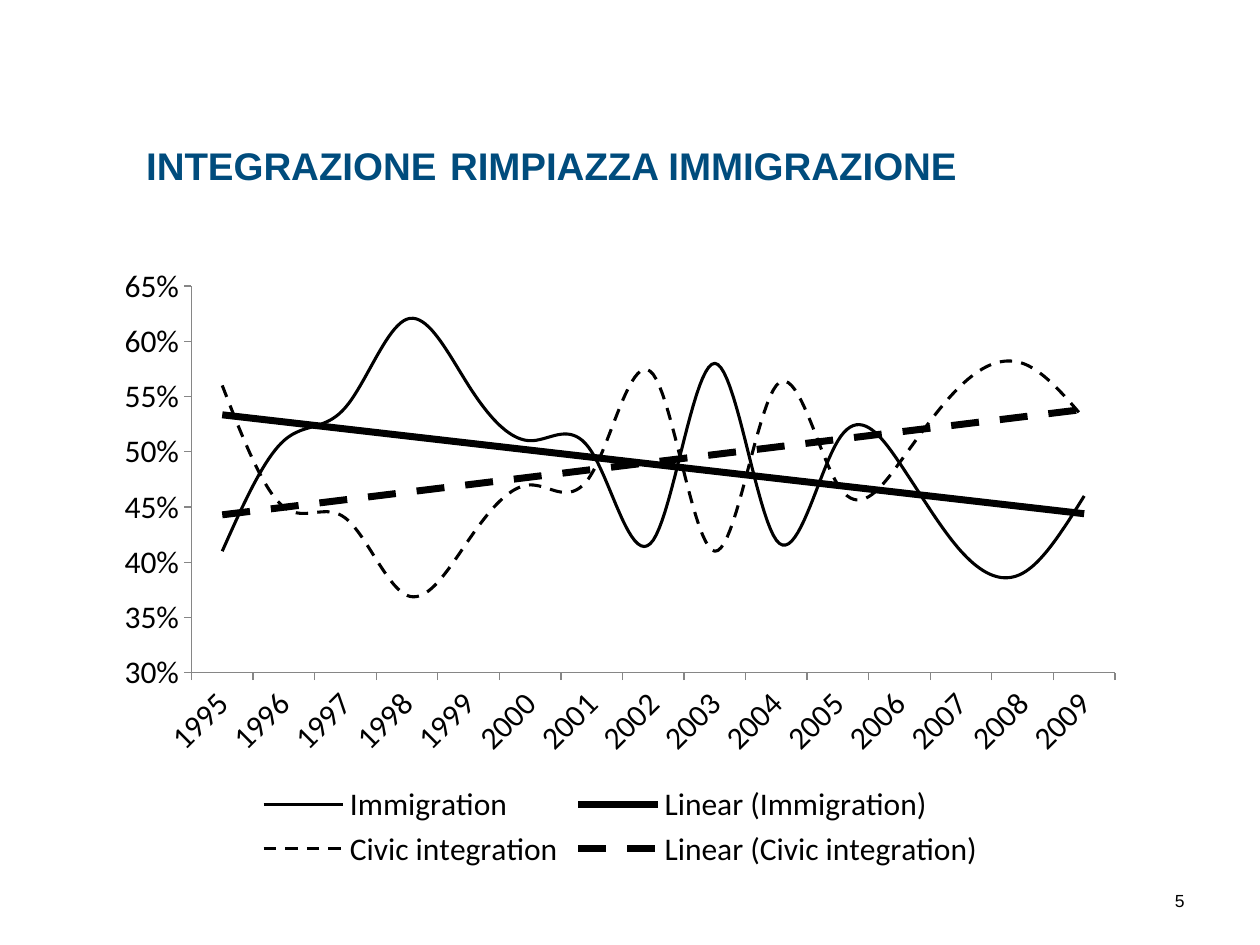
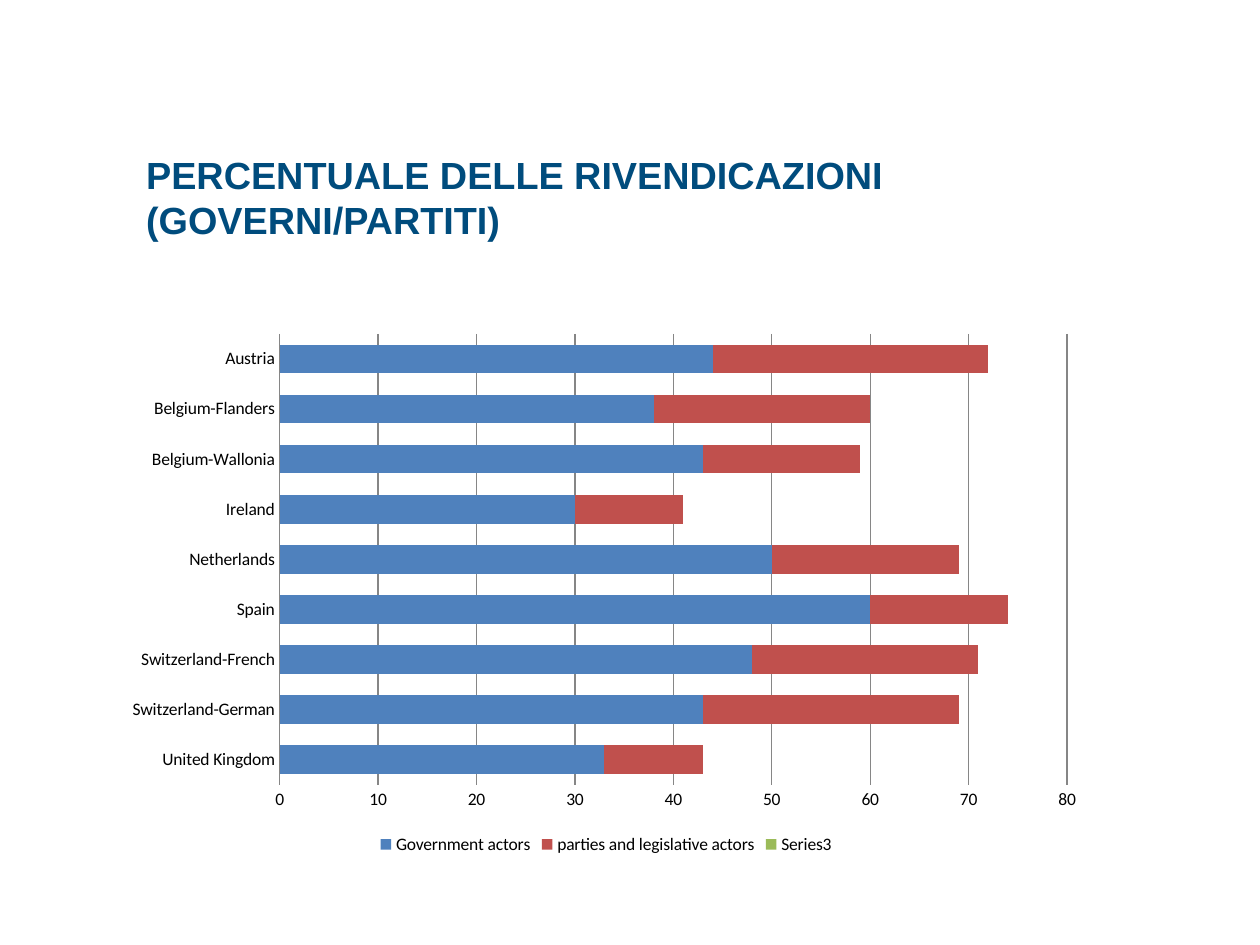
from pptx import Presentation
from pptx.chart.data import CategoryChartData
from pptx.dml.color import RGBColor
from pptx.enum.chart import XL_CHART_TYPE as ChartType, XL_LEGEND_POSITION as LegendPosition
from pptx.enum.chart import XL_TICK_MARK as TickMark
from pptx.enum.dml import MSO_LINE as Dash
from pptx.enum.text import MSO_ANCHOR as Anchor, MSO_AUTO_SIZE as AutoSize, PP_ALIGN as Align
from pptx.oxml import parse_xml
from pptx.oxml.ns import nsdecls
from pptx.util import Inches, Pt

BLACK, NAVY, GREY = "000000", "004C7D", "868686"


def colour(hex_code):
    return RGBColor.from_string(hex_code)


def add_span(para, text, size=22, color=NAVY, bold=True, new_line=False):
    if new_line:
        para.add_line_break()
    span = para.add_run()
    span.text = text
    span.font.name = "Arial"
    span.font.size = Pt(size)
    span.font.bold = bold
    span.font.color.rgb = colour(color)


deck = Presentation()
deck.slide_width, deck.slide_height = Inches(10), Inches(7.5)

# Content of the two pages
years = [str(year) for year in range(1995, 2010)]
topics = {
    "Immigration": [0.41, 0.51, 0.54, 0.62, 0.56, 0.51, 0.5, 0.42,
                    0.58, 0.42, 0.51, 0.49, 0.41, 0.39, 0.46],
    "Civic integration": [0.56, 0.45, 0.44, 0.37, 0.42, 0.47, 0.48, 0.57,
                          0.41, 0.56, 0.47, 0.49, 0.56, 0.58, 0.53],
}
countries = ["United Kingdom", "Switzerland-German", "Switzerland-French", "Spain",
             "Netherlands", "Ireland", "Belgium-Wallonia", "Belgium-Flanders", "Austria"]
actors = {
    "Government actors": [33, 43, 48, 60, 50, 30, 43, 38, 44],
    "parties and legislative actors": [10, 26, 23, 14, 19, 11, 16, 22, 28],
    "Series3": [None] * len(countries),
}
pages = [
    dict(title_top=0.99,
         title=[("INTEGRAZIONE", dict()), (" ", dict(size=28, color=BLACK)),
                ("RIMPIAZZA IMMIGRAZIONE", dict())],
         kind=ChartType.LINE, frame=(0.83, 2.02, 8.19, 4.92), size=18,
         categories=years, values=topics, plot_area=(1.52, 2.27, 7.33, 3.07)),
    dict(title_top=1.15,
         title=[("PERCENTUALE DELLE RIVENDICAZIONI", dict(size=21.6)),
                ("(GOVERNI/PARTITI)", dict(size=21.6, new_line=True))],
         kind=ChartType.BAR_STACKED, frame=(0.91, 2.57, 7.8, 4.25), size=10,
         categories=countries, values=actors, plot_area=(2.22, 2.65, 6.25, 3.58)),
]

# Title, chart, axes and legend of every page
charts = []
for content in pages:
    page = deck.slides.add_slide(deck.slide_layouts[5])
    title = page.shapes.title
    title.left, title.top = Inches(1.06), Inches(content["title_top"])
    title.width, title.height = Inches(8.74), Inches(0.63)
    frame = title.text_frame
    frame.auto_size = AutoSize.NONE
    frame.word_wrap = True
    frame.vertical_anchor = Anchor.TOP
    frame.margin_top = Inches(0.05)
    para = frame.paragraphs[0]
    para.alignment = Align.LEFT
    for text, style in content["title"]:
        add_span(para, text, **style)

    data = CategoryChartData()
    data.categories = content["categories"]
    for name, values in content["values"].items():
        data.add_series(name, values)
    left, top, width, height = content["frame"]
    place = [Inches(length) for length in content["frame"]]
    chart = page.shapes.add_chart(content["kind"], *place, data).chart
    charts.append(chart)
    chart.has_title = False
    chart.font.name = "Calibri"
    chart.font.size = Pt(content["size"])
    chart.font.color.rgb = colour(BLACK)
    chart.has_legend = True
    chart.legend.position = LegendPosition.BOTTOM
    chart.legend.include_in_layout = False
    chart.plots[0].vary_by_categories = False
    for axis in (chart.category_axis, chart.value_axis):
        axis.has_major_gridlines = False
        axis.major_tick_mark = TickMark.NONE
        axis.minor_tick_mark = TickMark.NONE
        axis.format.line.color.rgb = colour(GREY)
        axis.format.line.width = Pt(0.75)

    # Inner plot area, as shares of the chart frame
    area = chart.element.xpath("//c:plotArea")[0]
    for layout in area.xpath("./c:layout"):
        area.remove(layout)
    plot_left, plot_top, plot_width, plot_height = content["plot_area"]
    shares = dict(x=(plot_left - left) / width, y=(plot_top - top) / height,
                  w=plot_width / width, h=plot_height / height)
    sides = "".join(f'<c:{side} val="{share:.4f}"/>' for side, share in shares.items())
    area.insert(0, parse_xml(
        f'<c:layout {nsdecls("c")}><c:manualLayout><c:layoutTarget val="inner"/>'
        f'<c:xMode val="edge"/><c:yMode val="edge"/>{sides}</c:manualLayout></c:layout>'))

line_chart, bar_chart = charts

# Smooth lines with linear trends
for series, dash in zip(line_chart.plots[0].series, (Dash.SOLID, Dash.DASH)):
    series.smooth = True
    series.format.line.color.rgb = colour(BLACK)
    series.format.line.width = Pt(1.75)
    series.format.line.dash_style = dash
for node, dash in zip(line_chart.element.xpath("//c:ser"), ("solid", "dash")):
    node.xpath("./c:cat")[0].addprevious(parse_xml(
        f'<c:trendline {nsdecls("c", "a")}><c:spPr><a:ln w="{Pt(4)}"><a:solidFill>'
        f'<a:srgbClr val="{BLACK}"/></a:solidFill><a:prstDash val="{dash}"/></a:ln></c:spPr>'
        '<c:trendlineType val="linear"/><c:dispRSqr val="0"/><c:dispEq val="0"/></c:trendline>'))
for axis in (line_chart.category_axis, line_chart.value_axis):
    axis.major_tick_mark = TickMark.OUTSIDE
percent = line_chart.value_axis
percent.minimum_scale, percent.maximum_scale, percent.major_unit = 0.3, 0.65, 0.05
percent.tick_labels.number_format = "0%"
percent.tick_labels.number_format_is_linked = False

# Stacked bars with vertical gridlines
bars = bar_chart.plots[0]
bars.gap_width, bars.overlap = 75, 100
for series, fill in zip(bars.series, ("4F81BD", "C0504D", "9BBB59")):
    series.format.fill.solid()
    series.format.fill.fore_color.rgb = colour(fill)
counts = bar_chart.value_axis
counts.minimum_scale, counts.maximum_scale, counts.major_unit = 0, 80, 10
counts.format.line.fill.background()
counts.has_major_gridlines = True
counts.major_gridlines.format.line.color.rgb = colour(GREY)
counts.major_gridlines.format.line.width = Pt(0.75)

# Page number on the first page
box = deck.slides[0].shapes.add_textbox(Inches(7.17), Inches(6.95), Inches(2.33), Inches(0.4))
box.text_frame.word_wrap = True
box.text_frame.vertical_anchor = Anchor.MIDDLE
para = box.text_frame.paragraphs[0]
para.alignment = Align.RIGHT
add_span(para, "5", size=10, color=BLACK, bold=False)

deck.save("out.pptx")
